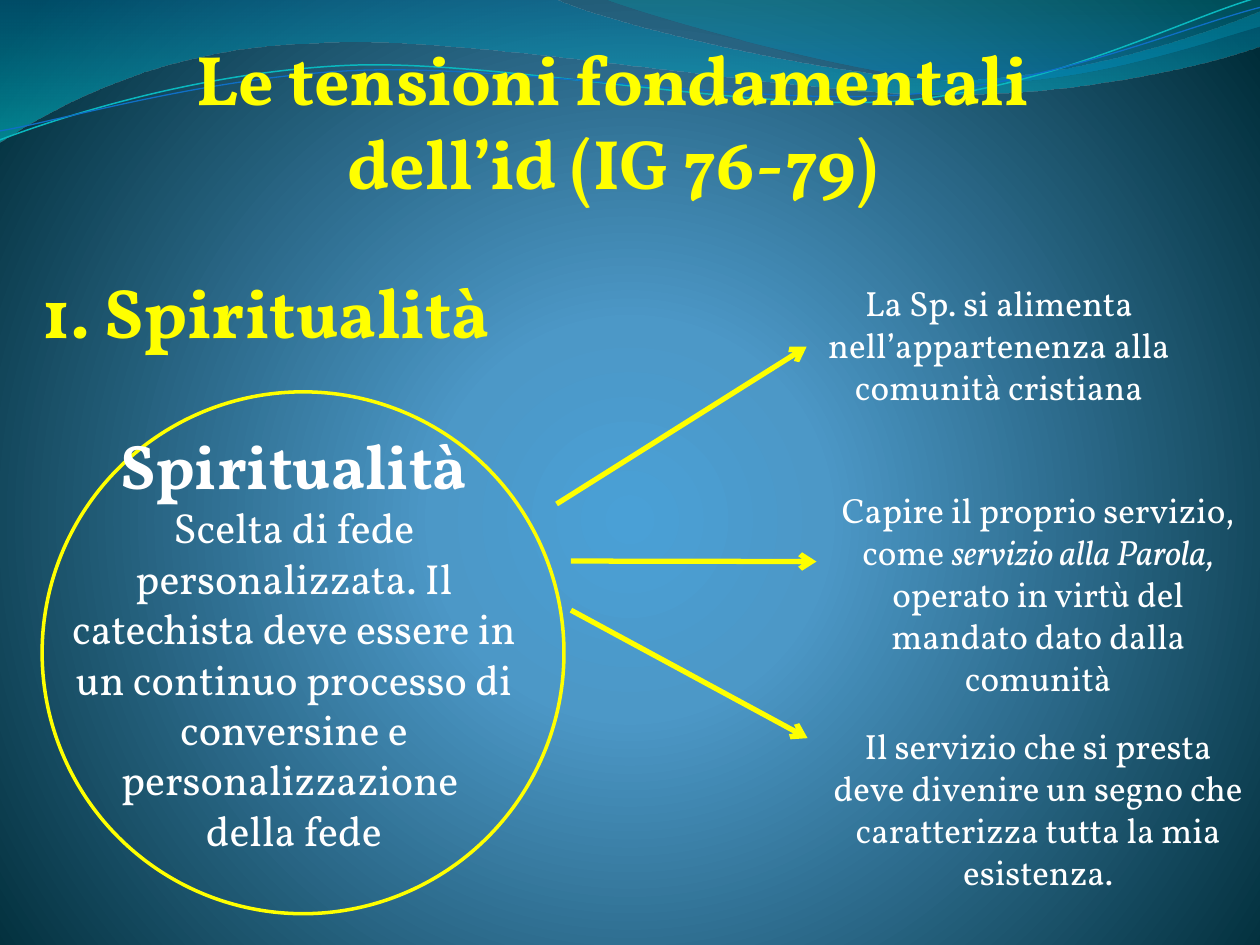
from lxml import etree
from pptx import Presentation
from pptx.dml.color import RGBColor
from pptx.enum import shapes, text
from pptx.oxml import ns
from pptx.util import Cm, Pt

YELLOW = RGBColor(0xFF, 0xFF, 0x00)
WHITE = RGBColor(0xFF, 0xFF, 0xFF)
SKY = RGBColor(0x4A, 0xA0, 0xD6)
STEEL = RGBColor(0x4C, 0x98, 0xC7)
NIGHT = RGBColor(0x00, 0x2C, 0x38)
OCEAN = RGBColor(0x00, 0x74, 0xA1)
TURQUOISE = RGBColor(0x00, 0xC6, 0xCF)
TEAL = RGBColor(0x00, 0xA1, 0xA9)
AZURE = RGBColor(0x00, 0x8B, 0xBF)
CYAN = RGBColor(0x0A, 0xB8, 0xBF)
BLUE = RGBColor(0x0F, 0x6F, 0xC6)

# Outlines in cm: a pair is a corner, six numbers are a cubic curve.
WIDE_WAVE = [
    (0, 0), (11.18, -0.03),
    (12.09, 0.43, 16.87, 1.6, 19.25, 1.6),
    (21.67, 1.6, 24.33, 0.66, 25.4, 0.23),
    (25.43, 0.91),
    (24.97, 1.12, 22.1, 1.93, 18.95, 1.9),
    (15.8, 1.9, 9.7, 0.71, 6.53, 0.86),
    (3.28, 0.91, 1.17, 2.11, -0.03, 2.87),
    (0, 0),
]
SHORT_WAVE = [
    (12.17, -0.03),
    (12.93, 0.28, 17.32, 1.57, 19.53, 1.65),
    (21.74, 1.75, 24.41, 0.81, 25.4, 0.53),
    (25.4, 0), (12.17, -0.03),
]
CYAN_STRAND = [
    (-0.05, 2.22),
    (1.19, 1.82, 4.02, 1.04, 7.05, 1.05),
    (10.05, 1.07, 15.02, 2.37, 18.08, 2.29),
    (21.13, 2.2, 23.87, 0.91, 25.41, 0.55),
]
BLUE_STRAND = [
    (-0.04, 2.04),
    (1.16, 1.9, 4.18, 1.15, 7.2, 1.16),
    (10.25, 1.18, 15.14, 2.25, 18.18, 2.17),
    (21.21, 2.1, 23.93, 1.06, 25.45, 0.75),
]
STRAND_TILT = -2.7


def add_xml(parent, tag, **attributes):
    return etree.SubElement(parent, ns.qn(tag), attributes)


def set_gradient(owner, stops, circle=None):
    """Fill in the owner's gradient from (position, colour, opacity) stops.

    It runs downwards, or outwards from the circle's l, t, r, b percentages.
    """
    gradient = owner.find(".//" + ns.qn("a:gradFill"))
    for child in list(gradient):
        gradient.remove(child)
    stop_list = add_xml(gradient, "a:gsLst")
    for position, color, opacity in stops:
        stop = add_xml(stop_list, "a:gs", pos=str(position * 1000))
        shade = add_xml(stop, "a:srgbClr", val=str(color))
        if opacity < 100:
            add_xml(shade, "a:alpha", val=str(opacity * 1000))
    if circle:
        target = add_xml(gradient, "a:path", path="circle")
        add_xml(target, "a:fillToRect",
                **{side: str(share * 1000) for side, share in zip("ltrb", circle)})
    else:
        add_xml(gradient, "a:lin", ang="5400000", scaled="0")


def add_run(paragraph, words, size=20, color=WHITE, bold=False, italic=False,
            outline=None, font="Vollkorn"):
    """Add a run; one with an outline width has coloured edges and no fill."""
    run = paragraph.add_run()
    run.text = words
    run.font.name = font
    run.font.size = Pt(size)
    run.font.bold = bold
    run.font.italic = italic
    if outline is None:
        run.font.color.rgb = color
        return
    run.font.fill.background()
    properties = run._r.get_or_add_rPr()
    edge = add_xml(properties, "a:ln", w=str(Pt(outline)))
    add_xml(add_xml(edge, "a:solidFill"), "a:srgbClr", val=str(color))
    properties.insert(0, edge)


class Board:
    """The current slide with its accent colour and line widths."""

    def __init__(self, slide, accent=YELLOW, ring_width=2, arrow_width=3):
        self.slide = slide
        self.accent = accent
        self.ring_width = ring_width
        self.arrow_width = arrow_width

    def backdrop(self, stops, circle):
        self.slide.background.fill.gradient()
        set_gradient(self.slide.element, stops, circle)

    def outline(self, parent, outline, closed):
        """Draw straight segments, then join each curve's three into a cubic."""
        points = [(Cm(x), Cm(y)) for part in outline
                  for x, y in zip(part[::2], part[1::2])]
        builder = parent.build_freeform(*points[0])
        builder.add_line_segments(points[1:], close=closed)
        shape = builder.convert_to_shape()
        shape.shadow.inherit = False
        segments = iter(shape.element.findall(".//" + ns.qn("a:lnTo")))
        for part in outline[1:]:
            first = next(segments)
            if len(part) == 6:
                first.tag = ns.qn("a:cubicBezTo")
                for _ in range(2):
                    extra = next(segments)
                    first.append(extra[0])
                    extra.getparent().remove(extra)
        return shape

    def wave(self, outline, stops):
        wave = self.outline(self.slide.shapes, outline, closed=True)
        wave.line.fill.background()
        wave.fill.gradient()
        set_gradient(wave.element, stops)

    def strands(self, *strands):
        group = self.slide.shapes.add_group_shape()
        for outline, color, width in strands:
            strand = self.outline(group.shapes, outline, closed=False)
            strand.rotation = STRAND_TILT
            strand.fill.background()
            strand.line.color.rgb = color
            strand.line.width = Pt(width)

    def ring(self, left, top, size):
        ring = self.slide.shapes.add_shape(
            shapes.MSO_SHAPE.OVAL, Cm(left), Cm(top), Cm(size), Cm(size))
        ring.shadow.inherit = False
        ring.fill.background()
        ring.line.color.rgb = self.accent
        ring.line.width = Pt(self.ring_width)

    def arrow(self, x1, y1, x2, y2):
        arrow = self.slide.shapes.add_connector(
            shapes.MSO_CONNECTOR.STRAIGHT, Cm(x1), Cm(y1), Cm(x2), Cm(y2))
        arrow.line.color.rgb = self.accent
        arrow.line.width = Pt(self.arrow_width)
        add_xml(arrow.line._get_or_add_ln(), "a:tailEnd", type="arrow")
        add_xml(arrow.element.spPr, "a:effectLst")

    def text(self, left, top, width, height, *paragraphs, align=text.PP_ALIGN.CENTER):
        """Add a text box; each paragraph is a list of (words, format) runs."""
        box = self.slide.shapes.add_textbox(Cm(left), Cm(top), Cm(width), Cm(height))
        frame = box.text_frame
        frame.word_wrap = True
        frame.auto_size = text.MSO_AUTO_SIZE.SHAPE_TO_FIT_TEXT
        for index, runs in enumerate(paragraphs):
            paragraph = frame.add_paragraph() if index else frame.paragraphs[0]
            paragraph.alignment = align
            for words, style in runs:
                add_run(paragraph, words, **style)


def main():
    deck = Presentation()
    deck.slide_width, deck.slide_height = Cm(25.4), Cm(19.05)
    board = Board(deck.slides.add_slide(deck.slide_layouts[6]))

    board.backdrop([(0, SKY, 100), (25, STEEL, 100), (100, NIGHT, 100)],
                   circle=(10, 110, 10, 100))
    board.wave(WIDE_WAVE, [(0, OCEAN, 45), (100, TURQUOISE, 55)])
    board.wave(SHORT_WAVE, [(0, TEAL, 30), (80, AZURE, 45)])
    board.strands((CYAN_STRAND, CYAN, 0.85), (BLUE_STRAND, BLUE, 0.75))

    heading = dict(size=40, color=YELLOW, bold=True)
    board.text(1.99, 0.6, 20.73, 3.68,
               [("Le tensioni fondamentali dell’id (IG 76-79)", heading)])

    board.ring(0.85, 7.9, 10.52)
    body = dict(size=24)
    board.text(1.06, 8.47, 9.73, 8.97,
               [("Spiritualità", dict(size=36, bold=True))],
               [("Scelta di fede personalizzata. Il catechista deve essere in un continuo "
                 "processo di conversine e personalizzazione ", body)],
               [("della fede", body)])

    consequences = [
        ((11.22, 10.16, 16.26, 6.99), (15.67, 5.55, 8.94, 2.82),
         [("La Sp. si alimenta nell’appartenenza alla comunità cristiana", {})]),
        ((11.51, 11.31, 16.46, 11.32), (16.46, 9.73, 8.94, 4.52),
         [("Capire il proprio servizio, come ", {}),
          ("servizio alla Parola, ", dict(italic=True)),
          ("operato in virtù del mandato dato dalla comunità", {})]),
        ((11.51, 12.3, 16.28, 14.88), (16.46, 14.48, 8.94, 3.68),
         [("Il servizio che si presta deve divenire un segno che caratterizza "
           "tutta la mia esistenza.", {})]),
    ]
    for arrow_ends, place, runs in consequences:
        board.arrow(*arrow_ends)
        board.text(*place, runs)

    board.text(0.61, 5.28, 16.1, 1.96, [("1. Spiritualità", dict(heading, outline=2.48))],
               align=text.PP_ALIGN.LEFT)

    deck.save("out.pptx")


if __name__ == "__main__":
    main()
